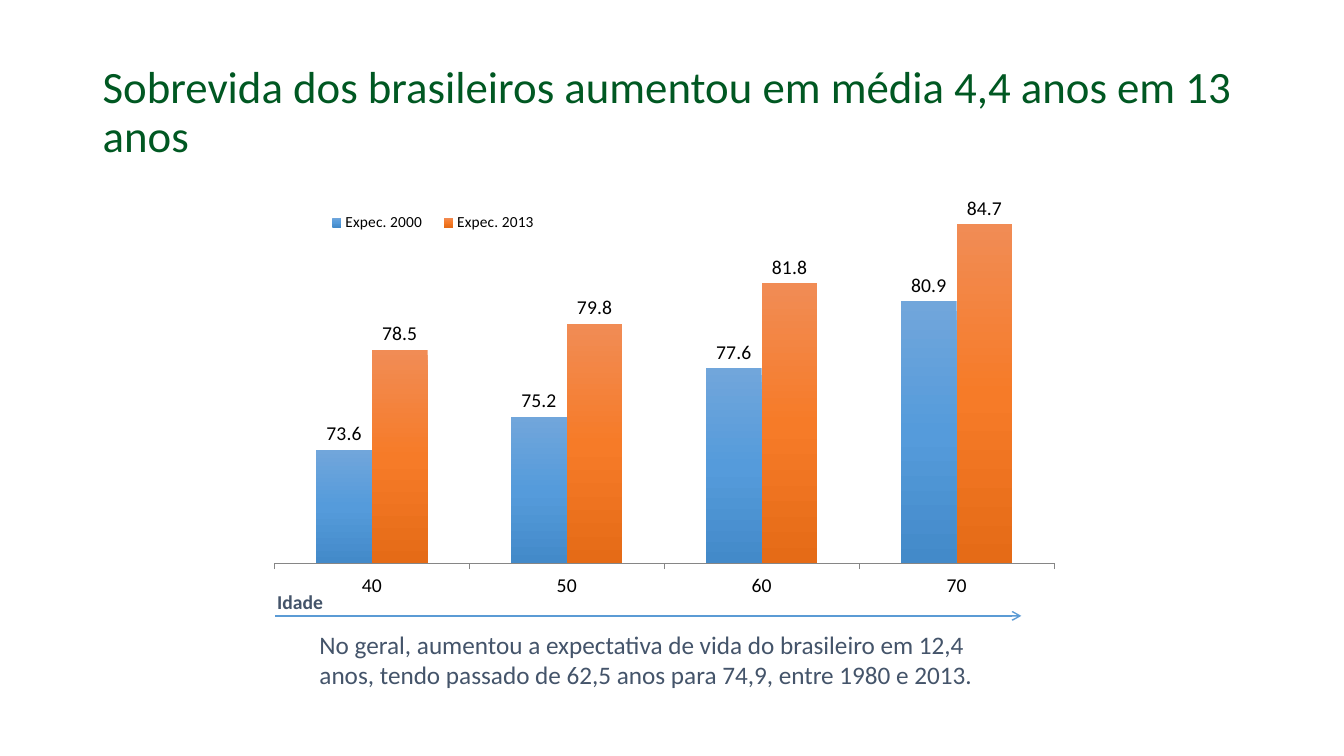
import copy

import pptx
import pptx.chart.data
import pptx.dml.color
import pptx.enum.chart
import pptx.enum.shapes
import pptx.enum.text
import pptx.oxml
import pptx.oxml.ns
import pptx.util
from pptx.util import Inches

qn = pptx.oxml.ns.qn


def color(value):
    return pptx.dml.color.RGBColor.from_string(value)


def set_font(font, size, shade="000000", bold=False):
    font.name = "Calibri"
    font.size = pptx.util.Pt(size)
    font.bold = bold
    font.color.rgb = color(shade)


def write_text(frame, text, *, size, shade, bold=False, spacing=None):
    para = frame.paragraphs[0]
    para.line_spacing = spacing
    span = para.add_run()
    span.text = text
    set_font(span.font, size, shade, bold)


class SlideBuilder:
    GREEN, SLATE, BLUE = "005822", "44546A", "5B9BD5"
    # Gradient stops from top to bottom, one list for each series
    GRADIENTS = (("71A6DB", "559BDB", "438AC9"), ("F18C55", "F67B28", "E56B17"))

    def __init__(self, page):
        self.page = page

    def text(self, left, top, width, height, text, *, wrap=True, middle=False, **style):
        box = self.page.shapes.add_textbox(
            Inches(left), Inches(top), Inches(width), Inches(height))
        frame = box.text_frame
        frame.word_wrap = wrap
        anchors = pptx.enum.text.MSO_ANCHOR
        frame.vertical_anchor = anchors.MIDDLE if middle else anchors.TOP
        write_text(frame, text, **style)

    def arrow(self, left, right, height):
        line = self.page.shapes.add_connector(
            pptx.enum.shapes.MSO_CONNECTOR.STRAIGHT,
            Inches(left), Inches(height), Inches(right), Inches(height))
        line.line.color.rgb = color(self.BLUE)
        line.line.width = pptx.util.Pt(1)
        outline = line.line._get_or_add_ln()
        outline.append(pptx.oxml.parse_xml(
            f'<a:tailEnd {pptx.oxml.ns.nsdecls("a")} type="arrow"/>'))
        line._element.spPr.append(pptx.oxml.parse_xml(
            f'<a:effectLst {pptx.oxml.ns.nsdecls("a")}/>'))

    def columns(self, left, top, width, height, categories, series):
        data = pptx.chart.data.CategoryChartData(number_format="0.0")
        data.categories = categories
        for name, values in series.items():
            data.add_series(name, values)
        chart = self.page.shapes.add_chart(
            pptx.enum.chart.XL_CHART_TYPE.COLUMN_CLUSTERED,
            Inches(left), Inches(top), Inches(width), Inches(height), data).chart
        set_font(chart.font, 10)
        chart.has_title = False
        self.axes(chart)
        self.legend(chart)
        self.place(chart._chartSpace.chart.plotArea, 0.009, 0.06, 0.963, 0.822, inner=True)

        plot = chart.plots[0]
        plot.gap_width, plot.overlap = 150, 0
        plot.vary_by_categories = False
        for column, stops in zip(plot.series, self.GRADIENTS):
            self.gradient(column, stops)
            labels = column.data_labels
            labels.show_value = True
            labels.position = pptx.enum.chart.XL_LABEL_POSITION.OUTSIDE_END
            set_font(labels.font, 14)

    def axes(self, chart):
        values = chart.value_axis
        values.minimum_scale, values.maximum_scale = 68, 86
        values.has_major_gridlines = False
        values.visible = False
        ages = chart.category_axis
        ages.major_tick_mark = pptx.enum.chart.XL_TICK_MARK.OUTSIDE
        ages.format.line.color.rgb = color("868686")
        ages.format.line.width = pptx.util.Pt(0.75)
        set_font(ages.tick_labels.font, 14)

    def legend(self, chart):
        chart.has_legend = True
        chart.legend.position = pptx.enum.chart.XL_LEGEND_POSITION.RIGHT
        chart.legend.include_in_layout = False
        set_font(chart.legend.font, 11)
        self.place(chart.legend._element, 0.06, 0.08, 0.29, 0.07)

    def place(self, element, left, top, width, height, inner=False):
        """Give a chart part a manual layout, in fractions of the chart."""
        for layout in element.findall(qn("c:layout")):
            element.remove(layout)
        target = '<c:layoutTarget val="inner"/>' if inner else ""
        layout = pptx.oxml.parse_xml(
            f'<c:layout {pptx.oxml.ns.nsdecls("c")}><c:manualLayout>{target}'
            '<c:xMode val="edge"/><c:yMode val="edge"/>'
            f'<c:x val="{left}"/><c:y val="{top}"/><c:w val="{width}"/><c:h val="{height}"/>'
            '</c:manualLayout></c:layout>')
        position = element.find(qn("c:legendPos"))
        element.insert(0 if position is None else element.index(position) + 1, layout)

    def gradient(self, column, shades):
        fill = column.format.fill
        fill.gradient()
        fill.gradient_angle = 270
        stop_list = column._element.find(".//" + qn("a:gsLst"))
        stop_list.append(copy.deepcopy(stop_list[0]))
        for index, (stop, shade) in enumerate(zip(fill.gradient_stops, shades)):
            stop.position = index / 2
            stop.color.rgb = color(shade)


def main():
    deck = pptx.Presentation()
    deck.slide_width, deck.slide_height = Inches(13.33), Inches(7.5)
    builder = SlideBuilder(deck.slides.add_slide(deck.slide_layouts[6]))

    # Title
    builder.text(0.92, 0.4, 11.5, 1.45,
                 "Sobrevida dos brasileiros aumentou em média 4,4 anos em 13 anos",
                 size=32, shade=builder.GREEN, middle=True, spacing=0.9)

    # Life expectancy by age
    builder.columns(2.65, 1.7, 8.03, 4.41, ["40", "50", "60", "70"], {
        "Expec. 2000": (73.6, 75.2, 77.6, 80.9),
        "Expec. 2013": (78.5, 79.8, 81.8, 84.7),
    })

    # Conclusion
    builder.text(3.07, 6.19, 6.69, 0.71,
                 "No geral, aumentou a expectativa de vida do brasileiro em 12,4 anos, "
                 "tendo passado de 62,5 anos para 74,9, entre 1980 e 2013.",
                 size=18, shade=builder.SLATE)

    # Age direction
    builder.text(2.65, 5.8, 0.66, 0.34, "Idade", wrap=False,
                 size=14, shade=builder.SLATE, bold=True)
    builder.arrow(2.73, 10.13, 6.11)

    deck.save("out.pptx")


if __name__ == "__main__":
    main()
